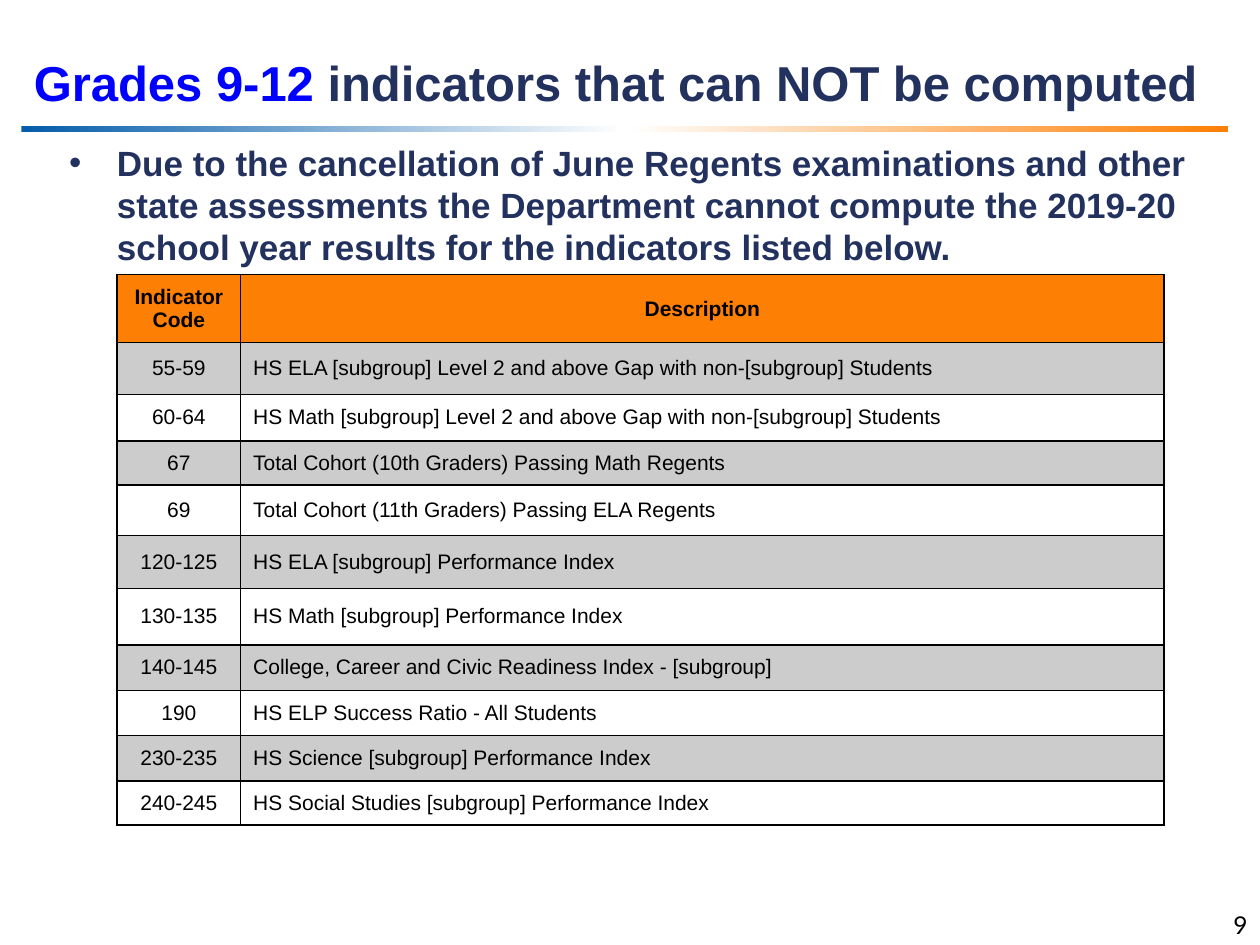
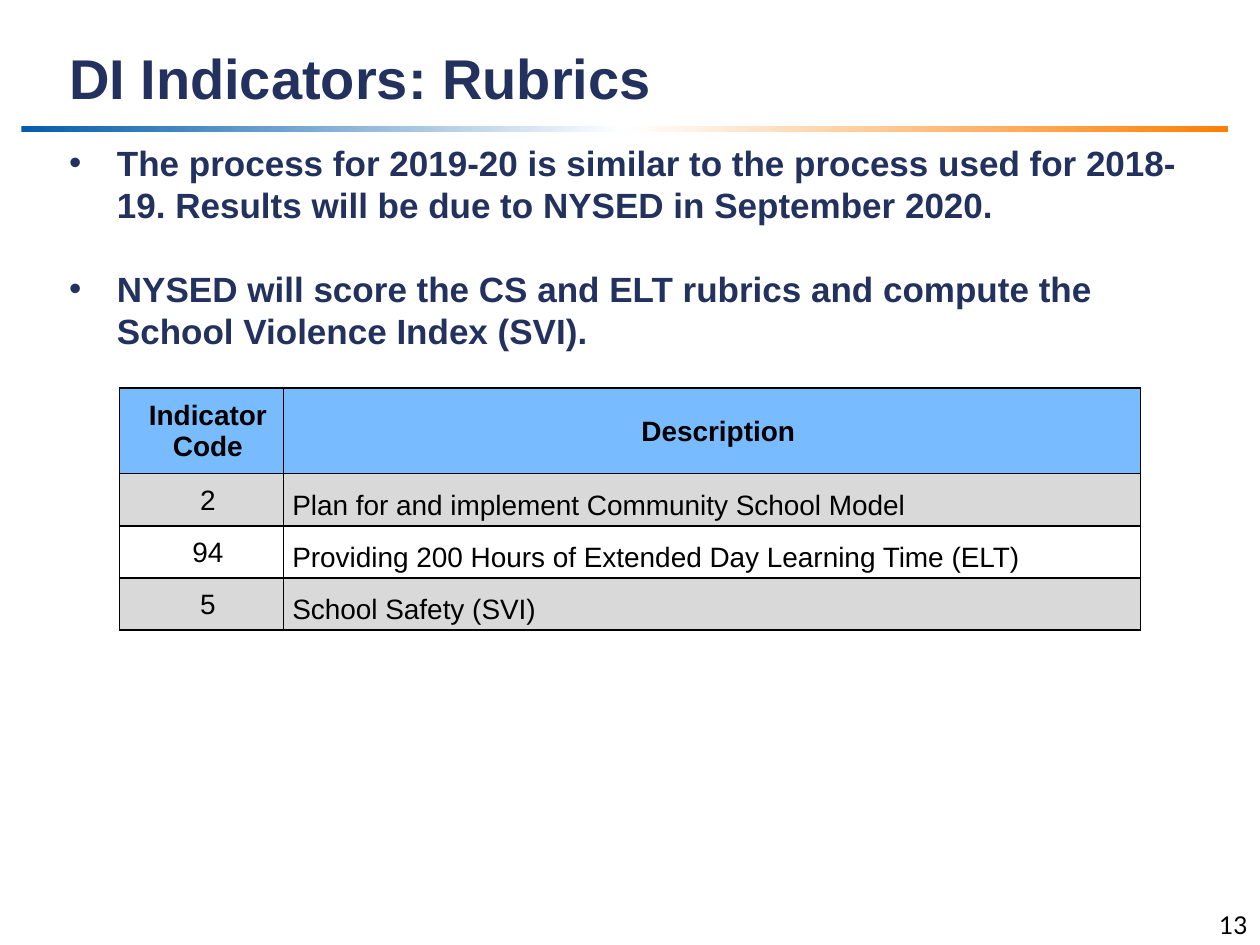
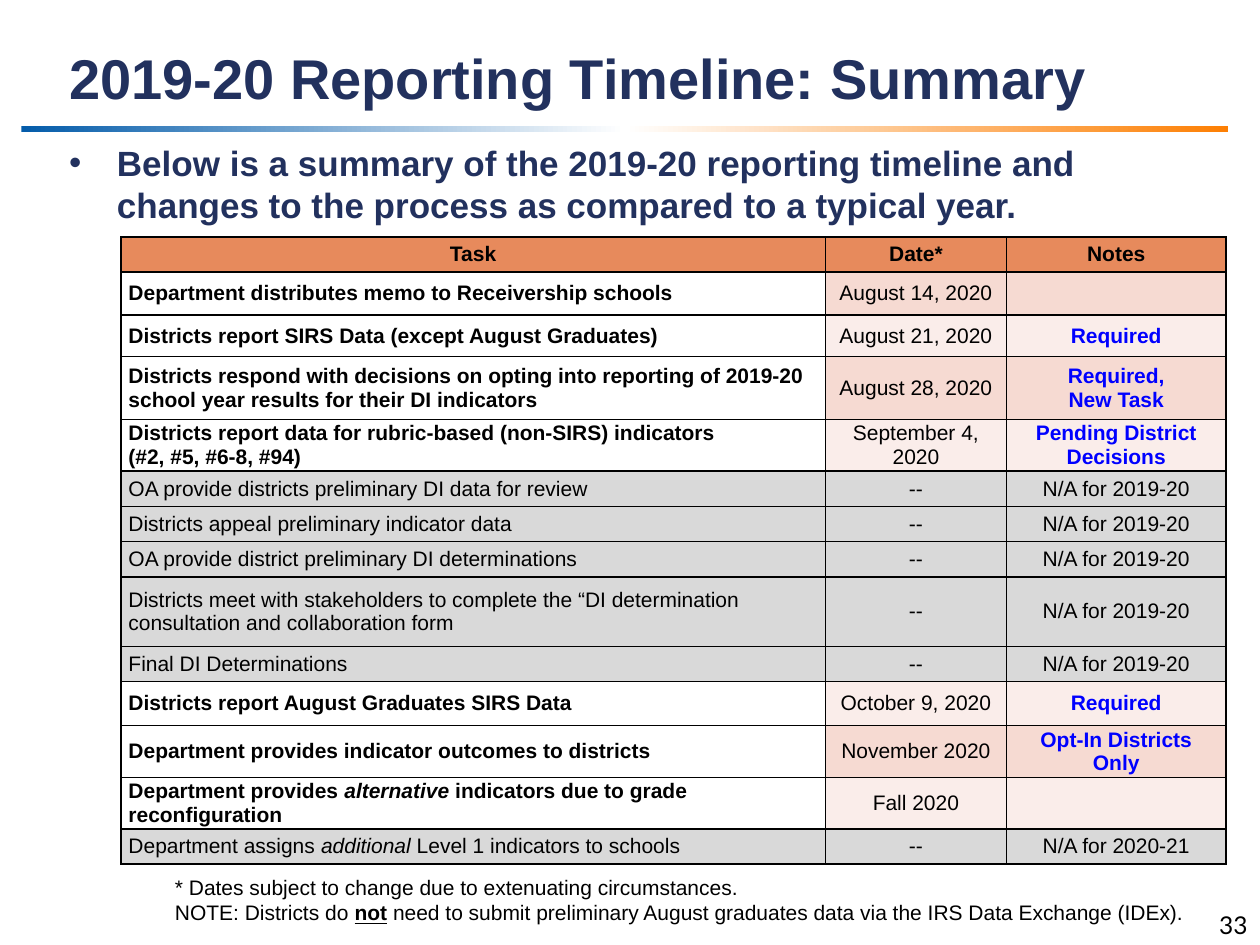
from copy import deepcopy
from dataclasses import dataclass

from lxml import etree
from pptx import Presentation
from pptx import util as u
from pptx.dml.color import RGBColor
from pptx.enum import shapes, text
from pptx.oxml.ns import qn

# The slide is a grid of 100 columns by 75 rows.
COLS, ROWS = 100, 75
UNIT = u.Inches(10) // COLS

NAVY, BLUE, BLACK = "22315E", "0000FF", "000000"
BAND = [(0, "045CAA"), (0.5, "FFFFFF"), (1, "FD7F03")]
GREY = "D9D9D9"
TEXT_LEFT, TEXT_TOP, TEXT_WIDTH = 4.5, 10.7, 92.3
CENTER, LEFT, RIGHT = text.PP_ALIGN.CENTER, text.PP_ALIGN.LEFT, text.PP_ALIGN.RIGHT


@dataclass
class Cell:
    """One table cell; margins are left, top, right, bottom in inches."""
    paragraphs: list
    fill: str = None
    align: object = CENTER
    bold: bool = False
    color: str = BLACK
    margins: tuple = (0.06, 0, 0.06, 0)


def rgb(hex_color):
    return RGBColor.from_string(hex_color)


def grid(*lengths):
    return [u.Emu(round(n * UNIT)) for n in lengths]


def format_run(r, size, color=BLACK, bold=False, italic=False, underline=False, font="Arial"):
    r.font.name, r.font.size = font, u.Pt(size)
    r.font.bold, r.font.italic, r.font.underline = bold, italic, underline
    r.font.color.rgb = rgb(color)


def add_bullet(p):
    pPr = p._p.get_or_add_pPr()
    pPr.set("marL", str(u.Inches(0.38)))
    pPr.set("indent", str(-u.Inches(0.38)))
    etree.SubElement(pPr, qn("a:buFont")).set("typeface", "Arial")
    etree.SubElement(pPr, qn("a:buChar")).set("char", "•")


def write(tf, paragraphs, align=LEFT, leading=None, gap=0, bullet=False, **fmt):
    """A paragraph is a string or a list of (string, format changes)."""
    for i, content in enumerate(paragraphs):
        p = tf.paragraphs[0] if i == 0 else tf.add_paragraph()
        if bullet:
            add_bullet(p)
        p.alignment = align
        if leading:
            p.line_spacing = u.Pt(leading)
        if gap and i:
            p.space_before = u.Pt(gap)
        pieces = [(content, {})] if isinstance(content, str) else content
        for words, changes in pieces:
            r = p.add_run()
            r.text = words
            format_run(r, **{**fmt, **changes})


def add_text(s, box, paragraphs, anchor=text.MSO_ANCHOR.TOP, **fmt):
    tf = s.shapes.add_textbox(*grid(*box)).text_frame
    tf.word_wrap = True
    tf.vertical_anchor = anchor
    write(tf, paragraphs, **fmt)


def add_band(s):
    sp = s.shapes.add_shape(shapes.MSO_SHAPE.RECTANGLE, *grid(1.7, 10, 95.8, 0.5))
    sp.shadow.inherit = False
    sp.line.fill.background()
    sp.fill.gradient()
    sp.fill.gradient_angle = 0
    stops = sp._element.spPr.find(qn("a:gradFill")).find(qn("a:gsLst"))
    stops.insert(1, deepcopy(stops[0]))
    for stop, (position, color) in zip(sp.fill.gradient_stops, BAND):
        stop.position = position
        stop.color.rgb = rgb(color)


def add_bullets(s, paragraphs, height):
    add_text(s, (TEXT_LEFT, TEXT_TOP, TEXT_WIDTH, height), paragraphs, bullet=True,
             leading=24, gap=24, size=20, color=NAVY, bold=True)


def add_borders(cell):
    tcPr = cell._tc.get_or_add_tcPr()
    for i, side in enumerate(("lnL", "lnR", "lnT", "lnB")):
        ln = etree.Element(qn("a:" + side), w=str(u.Pt(1)))
        fill = etree.SubElement(ln, qn("a:solidFill"))
        etree.SubElement(fill, qn("a:srgbClr")).set("val", BLACK)
        tcPr.insert(i, ln)


def fill_cell(cell, spec_cell, size):
    cell.margin_left, cell.margin_top, cell.margin_right, cell.margin_bottom = map(
        u.Inches, spec_cell.margins)
    cell.vertical_anchor = text.MSO_ANCHOR.MIDDLE
    if spec_cell.fill:
        cell.fill.solid()
        cell.fill.fore_color.rgb = rgb(spec_cell.fill)
    else:
        cell.fill.background()
    add_borders(cell)
    write(cell.text_frame, spec_cell.paragraphs, align=spec_cell.align, size=size,
          bold=spec_cell.bold, color=spec_cell.color)


def add_table(s, left, top, widths, heights, cells, size):
    frame = s.shapes.add_table(len(heights), len(widths),
                               *grid(left, top, sum(widths), sum(heights)))
    table = frame.table
    table.first_row = table.horz_banding = False
    for column, width in zip(table.columns, grid(*widths)):
        column.width = width
    for row, height, row_cells in zip(table.rows, grid(*heights), cells):
        row.height = height
        for cell, content in zip(row.cells, row_cells):
            fill_cell(cell, content, size)


def add_indicator_table(s, left, top, widths, heights, indicators, size,
                        head_fill, stripe, code_margins, description_margins):
    cells = [[Cell([name], head_fill, bold=True, margins=code_margins)
              for name in ("Indicator Code", "Description")]]
    for i, (code, description) in enumerate(indicators):
        fill = None if i % 2 else stripe
        cells.append([Cell([code], fill, margins=code_margins),
                      Cell([description], fill, LEFT, margins=description_margins)])
    add_table(s, left, top, widths, heights, cells, size)


def add_timeline_table(s, left, top, widths, tasks):
    """Tasks that are not dropped are bold and tinted; dropped ones are grey."""
    cells = [[Cell([name], "E78A5C", bold=True) for name in ("Task", "Date*", "Notes")]]
    for i, (_, task, date, notes) in enumerate(tasks, 1):
        active = date != "--"
        tint = ("FAEDEA", "F6DAD2")[i % 2] if active else GREY
        cells.append([Cell(task, None if active else GREY, LEFT, bold=active),
                      Cell([date], tint),
                      Cell(notes, tint, bold=active, color=BLUE if active else BLACK)])
    add_table(s, left, top, widths, [2.8] + [task[0] for task in tasks], cells, 12)


def add_slide(prs, title, number, title_left=TEXT_LEFT, title_size=32):
    s = prs.slides.add_slide(prs.slide_layouts[6])
    add_band(s)
    add_text(s, (title_left, 0, COLS - title_left, 9.3), [title],
             anchor=text.MSO_ANCHOR.BOTTOM, leading=36, size=title_size, color=NAVY, bold=True)
    add_text(s, (76.7, 71.7, 23.3, 3.3), [str(number)], align=RIGHT, size=14, font="Lato")
    return s


def add_not_computed(prs):
    title = [("Grades 9-12 ", {"color": BLUE}), ("indicators that can NOT be computed", {})]
    s = add_slide(prs, title, 9, title_left=1.7, title_size=28)
    add_bullets(s, ["Due to the cancellation of June Regents examinations and other state "
                    "assessments the Department cannot compute the 2019-20 school year results "
                    "for the indicators listed below."], 11.1)
    indicators = [
        ("55-59", "HS ELA [subgroup] Level 2 and above Gap with non-[subgroup] Students"),
        ("60-64", "HS Math [subgroup] Level 2 and above Gap with non-[subgroup] Students"),
        ("67", "Total Cohort (10th Graders) Passing Math Regents"),
        ("69", "Total Cohort (11th Graders) Passing ELA Regents"),
        ("120-125", "HS ELA [subgroup] Performance Index"),
        ("130-135", "HS Math [subgroup] Performance Index"),
        ("140-145", "College, Career and Civic Readiness Index - [subgroup]"),
        ("190", "HS ELP Success Ratio - All Students"),
        ("230-235", "HS Science [subgroup] Performance Index"),
        ("240-245", "HS Social Studies [subgroup] Performance Index"),
    ]
    heights = [5.4, 4.1, 3.7, 3.5, 4, 4.2, 4.5, 3.6, 3.6, 3.6, 3.5]
    add_indicator_table(s, 9.3, 21.8, [9.8, 73.3], heights, indicators, 12, "FD7F03", "CCCCCC",
                        (0.1, 0.05, 0.1, 0.05), (0.1, 0.01, 0.1, 0.01))


def add_rubrics(prs):
    s = add_slide(prs, "DI Indicators: Rubrics", 13)
    add_bullets(s, ["The process for 2019-20 is similar to the process used for 2018-19. "
                    "Results will be due to NYSED in September 2020.",
                    "NYSED will score the CS and ELT rubrics and compute the School Violence "
                    "Index (SVI)."], 17.8)
    indicators = [
        ("2", "Plan for and implement Community School Model"),
        ("94", "Providing 200 Hours of Extended Day Learning Time (ELT)"),
        ("5", "School Safety (SVI)"),
    ]
    add_indicator_table(s, 9.5, 30.8, [13, 68], [6.8] + [4.13] * 3, indicators, 16, "78BCFF",
                        GREY, (0.11, 0.01, 0.01, 0), (0.07, 0.1, 0.01, 0))


def add_timeline(prs):
    s = add_slide(prs, "2019-20 Reporting Timeline: Summary", 33)
    add_bullets(s, ["Below is a summary of the 2019-20 reporting timeline and changes to the "
                    "process as compared to a typical year."], 7.7)
    italic, dropped = {"italic": True}, ["N/A for 2019-20"]
    tasks = [
        (3.4, ["Department distributes memo to Receivership schools"], "August 14, 2020", [""]),
        (3.3, ["Districts report SIRS Data (except August Graduates)"],
         "August 21, 2020", ["Required"]),
        (5, ["Districts respond with decisions on opting into reporting of 2019-20 school year "
             "results for their DI indicators"], "August 28, 2020", ["Required,", "New Task"]),
        (4.1, ["Districts report data for rubric-based (non-SIRS) indicators",
               "(#2, #5, #6-8, #94)"], "September 4, 2020", ["Pending District Decisions"]),
        (2.8, ["OA provide districts preliminary DI data for review"], "--", dropped),
        (2.8, ["Districts appeal preliminary indicator data"], "--", dropped),
        (2.8, ["OA provide district preliminary DI determinations"], "--", dropped),
        (5.5, ["Districts meet with stakeholders to complete the “DI determination "
               "consultation and collaboration form"], "--", dropped),
        (2.8, ["Final DI Determinations"], "--", dropped),
        (3.5, ["Districts report August Graduates SIRS Data"], "October 9, 2020", ["Required"]),
        (4.1, ["Department provides indicator outcomes to districts"],
         "November 2020", ["Opt-In Districts Only"]),
        (4.1, [[("Department provides ", {}), ("alternative ", italic),
                ("indicators due to grade reconfiguration", {})]], "Fall 2020", [""]),
        (2.8, [[("Department assigns ", {}), ("additional", italic),
                (" Level 1 indicators to schools", {})]], "--", ["N/A for 2020-21"]),
    ]
    add_timeline_table(s, 9.6, 18.8, [55.9, 14.4, 17.4], tasks)
    add_text(s, (12.9, 68.9, 85.6, 5),
             ["* Dates subject to change due to extenuating circumstances.",
              [("NOTE: Districts do ", {}), ("not", {"bold": True, "underline": True}),
               (" need to submit preliminary August graduates data via the IRS Data Exchange "
                "(IDEx).", {})]], leading=14.5, size=12)


def main():
    prs = Presentation()
    prs.slide_width, prs.slide_height = grid(COLS, ROWS)
    add_not_computed(prs)
    add_rubrics(prs)
    add_timeline(prs)
    prs.save("out.pptx")


if __name__ == "__main__":
    main()
